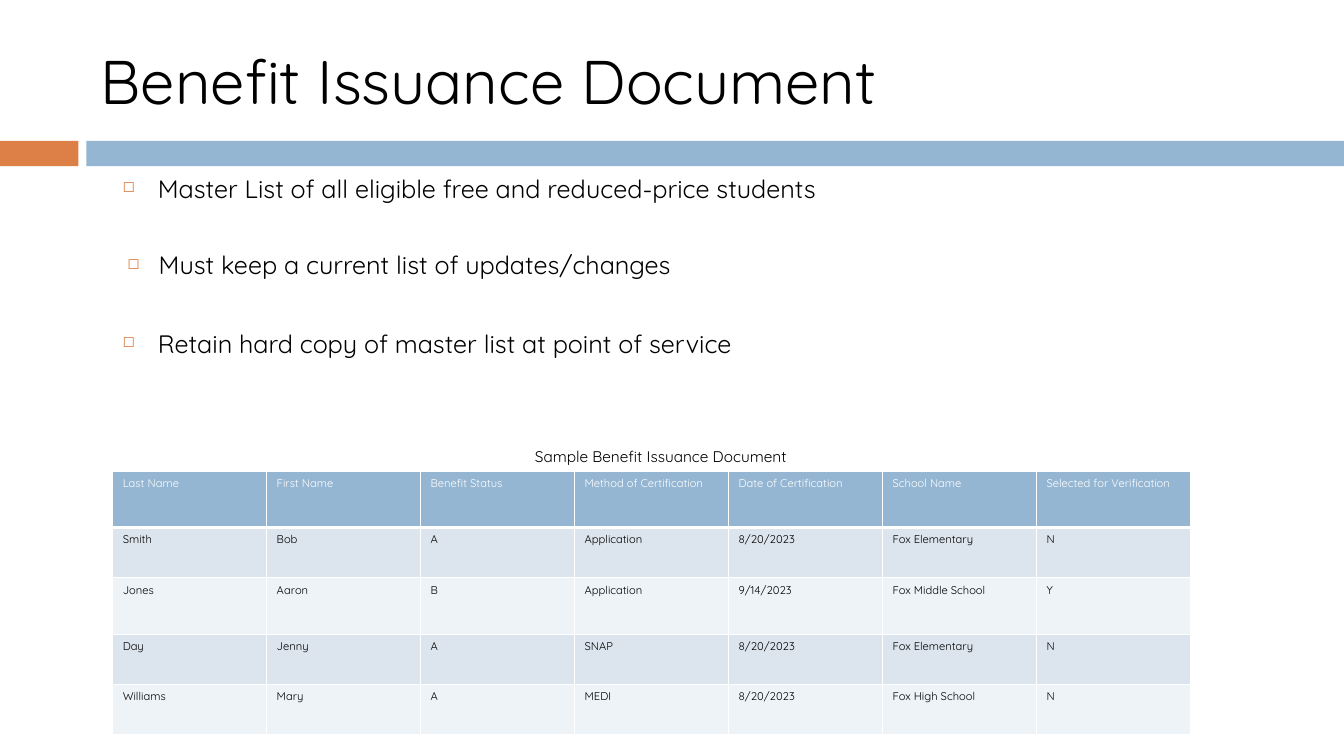
"""Build the Benefit Issuance Document slide."""
from lxml.etree import SubElement
from pptx import Presentation
from pptx.dml.color import RGBColor
from pptx.enum.shapes import MSO_SHAPE
from pptx.enum.text import MSO_ANCHOR, PP_ALIGN
from pptx.oxml.ns import qn
from pptx.util import Cm, Pt

BLACK, WHITE, ORANGE, BLUE = "000000", "FFFFFF", "DD8047", "94B6D2"
ROW_TINTS = ["EEF3F7", "DCE5EE"]


def color(value):
    return RGBColor.from_string(value)


def add_run(paragraph, text, size, ink=BLACK):
    run = paragraph.add_run()
    run.text = text
    run.font.name = "Quicksand"
    run.font.size = Pt(size)
    run.font.color.rgb = color(ink)


deck = Presentation()
deck.slide_width, deck.slide_height = Cm(33.87), Cm(19.05)
slide = deck.slides.add_slide(deck.slide_layouts[5])

for left, width, fill in [(0, 1.98, ORANGE), (2.18, 31.69, BLUE)]:
    band = slide.shapes.add_shape(
        MSO_SHAPE.RECTANGLE, Cm(left), Cm(3.55), Cm(width), Cm(0.64))
    band.shadow.inherit = False
    band.fill.solid()
    band.fill.fore_color.rgb = color(fill)
    band.line.fill.background()

title = slide.shapes.title
title.left, title.top, title.width, title.height = Cm(2.29), Cm(1.07), Cm(24.26), Cm(1.9)
title.text_frame.vertical_anchor = MSO_ANCHOR.MIDDLE
heading = title.text_frame.paragraphs[0]
heading.alignment = PP_ALIGN.LEFT
add_run(heading, "Benefit Issuance Document", 44)

requirements = [
    ("Master List of all eligible free and reduced-price students", 0, 0.89, -0.89),
    ("Must keep a current list of updates/changes", 33, 0.91, -0.79),
    ("Retain hard copy of master list at point of service", 34.5, 0.89, -0.89),
]
body = slide.shapes.add_textbox(Cm(2.84), Cm(4.24), Cm(26.8), Cm(6.8)).text_frame
body.word_wrap = True
for index, (text, gap, margin, indent) in enumerate(requirements):
    requirement = body.add_paragraph() if index else body.paragraphs[0]
    requirement.space_before = Pt(gap)
    add_run(requirement, text, 18)
    properties = requirement._p.get_or_add_pPr()
    properties.set("marL", str(Cm(margin)))
    properties.set("indent", str(Cm(indent)))
    bullet_color = SubElement(properties, qn("a:buClr"))
    SubElement(bullet_color, qn("a:srgbClr"), val=ORANGE)
    SubElement(properties, qn("a:buSzPct"), val="60000")
    SubElement(properties, qn("a:buChar"), char="◻")

records = [
    ["Last Name", "First Name", "Benefit Status", "Method of Certification",
     "Date of Certification", "School Name", "Selected for Verification"],
    ["Smith", "Bob", "A", "Application", "8/20/2023", "Fox Elementary", "N"],
    ["Jones", "Aaron", "B", "Application", "9/14/2023", "Fox Middle School", "Y"],
    ["Day", "Jenny", "A", "SNAP", "8/20/2023", "Fox Elementary", "N"],
    ["Williams", "Mary", "A", "MEDI", "8/20/2023", "Fox High School", "N"],
]
row_heights = [1.42, 1.27, 1.42, 1.27, 1.27]
sample = slide.shapes.add_table(
    len(records), len(records[0]), Cm(2.84), Cm(11.87), Cm(27.16), Cm(6.65)).table
for column in sample.columns:
    column.width = Cm(3.88)

for row, (record, height) in enumerate(zip(records, row_heights)):
    sample.rows[row].height = Cm(height)
    for column, text in enumerate(record):
        cell = sample.cell(row, column)
        add_run(cell.text_frame.paragraphs[0], text, 8, BLACK if row else WHITE)
        cell_properties = cell._tc.get_or_add_tcPr()
        for side in "LRTB":
            under_header = (row, side) in [(0, "B"), (1, "T")]
            border = SubElement(cell_properties, qn(f"a:ln{side}"),
                                w=str(Pt(3 if under_header else 1)))
            border_fill = SubElement(border, qn("a:solidFill"))
            SubElement(border_fill, qn("a:srgbClr"), val=WHITE)
        cell.fill.solid()
        cell.fill.fore_color.rgb = color(ROW_TINTS[row % 2] if row else BLUE)

caption = slide.shapes.add_textbox(Cm(13.23), Cm(11.13), Cm(7.42), Cm(0.74)).text_frame
caption.word_wrap = True
add_run(caption.paragraphs[0], "Sample Benefit Issuance Document", 11)

deck.save("out.pptx")
